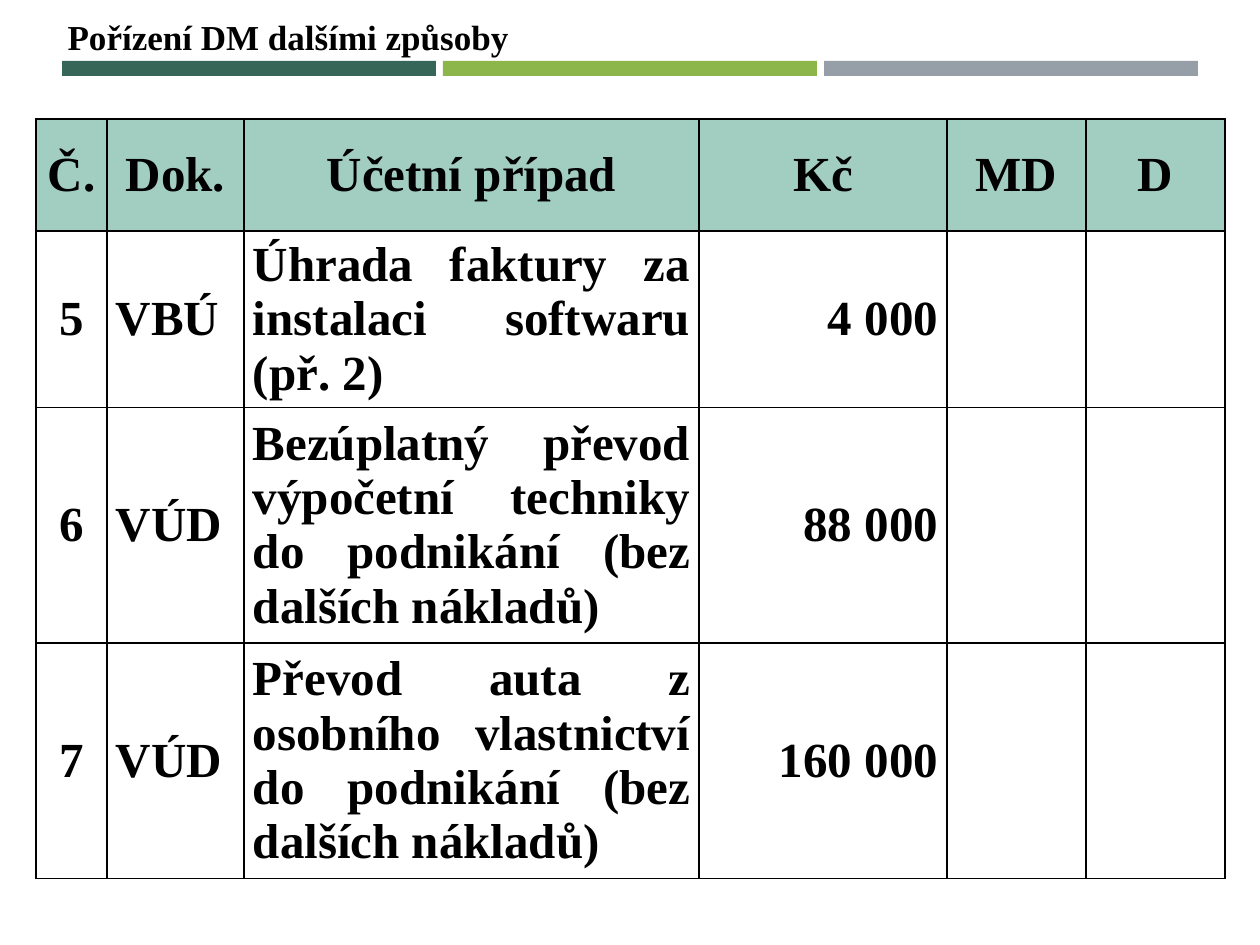
from lxml.etree import SubElement
from pptx import Presentation
from pptx.dml.color import RGBColor
from pptx.enum.shapes import MSO_SHAPE
from pptx.enum.text import MSO_ANCHOR, MSO_AUTO_SIZE, PP_ALIGN
from pptx.oxml.ns import qn
from pptx.util import Pt

COLORS = {
    "text": "000000",
    "border": "000000",
    "header": "A2CEC1",
    "dark green": "366658",
    "light green": "8CB64A",
    "gray": "969FA7",
}
FONT = "Times New Roman"


def px(length):
    return round(length * 914400 / 126)


def style_text(paragraph, size, alignment):
    paragraph.alignment = alignment
    for run in paragraph.runs:
        run.font.name = FONT
        run.font.size = Pt(size)
        run.font.bold = True
        run.font.color.rgb = RGBColor.from_string(COLORS["text"])


presentation = Presentation()
presentation.slide_width = px(1260)
presentation.slide_height = px(945)
slide = presentation.slides.add_slide(presentation.slide_layouts[5])

for index, color in enumerate(["dark green", "light green", "gray"]):
    stripe = slide.shapes.add_shape(
        MSO_SHAPE.RECTANGLE, px(62 + index * 381), px(61), px(374), px(15))
    stripe.shadow.inherit = False
    stripe.fill.solid()
    stripe.fill.fore_color.rgb = RGBColor.from_string(COLORS[color])
    stripe.line.fill.background()

title = slide.shapes.title
title.left, title.top, title.width, title.height = px(55), px(9), px(470), px(55)
title.text_frame.text = "Pořízení DM dalšími způsoby"
title.text_frame.word_wrap = False
title.text_frame.auto_size = MSO_AUTO_SIZE.SHAPE_TO_FIT_TEXT
title.text_frame.vertical_anchor = MSO_ANCHOR.TOP
style_text(title.text_frame.paragraphs[0], 20, PP_ALIGN.LEFT)

entries = [
    ["Č.", "Dok.", "Účetní případ", "Kč", "MD", "D"],
    ["5", "VBÚ", "Úhrada faktury za instalaci softwaru (př. 2)", "4 000", "", ""],
    ["6", "VÚD", "Bezúplatný převod výpočetní techniky do podnikání (bez dalších nákladů)",
     "88 000", "", ""],
    ["7", "VÚD", "Převod auta z osobního vlastnictví do podnikání (bez dalších nákladů)",
     "160 000", "", ""],
]
column_widths = [71, 137, 455, 248, 139, 139]
row_heights = [112, 176, 235, 235]
body_alignments = [PP_ALIGN.CENTER, PP_ALIGN.LEFT, PP_ALIGN.JUSTIFY,
                   PP_ALIGN.RIGHT, PP_ALIGN.CENTER, PP_ALIGN.CENTER]

ledger = slide.shapes.add_table(
    len(row_heights), len(column_widths), px(36), px(119),
    px(sum(column_widths)), px(sum(row_heights))).table
ledger.horz_banding = False
ledger.first_row = False
for column, width in zip(ledger.columns, column_widths):
    column.width = px(width)
for row, height in zip(ledger.rows, row_heights):
    row.height = px(height)

for row_index, entry in enumerate(entries):
    for column_index, wording in enumerate(entry):
        cell = ledger.cell(row_index, column_index)
        cell.text_frame.text = wording
        cell.vertical_anchor = MSO_ANCHOR.MIDDLE
        cell.margin_left = cell.margin_right = px(9)
        cell.margin_top = cell.margin_bottom = 0
        is_header = row_index == 0
        style_text(cell.text_frame.paragraphs[0], 28,
                   PP_ALIGN.CENTER if is_header else body_alignments[column_index])

        properties = cell._tc.get_or_add_tcPr()
        for side in ["a:lnL", "a:lnR", "a:lnT", "a:lnB"]:
            border = SubElement(properties, qn(side), w=str(Pt(1)))
            border_fill = SubElement(border, qn("a:solidFill"))
            SubElement(border_fill, qn("a:srgbClr"), val=COLORS["border"])
        if is_header:
            cell.fill.solid()
            cell.fill.fore_color.rgb = RGBColor.from_string(COLORS["header"])
        else:
            cell.fill.background()

presentation.save("out.pptx")
